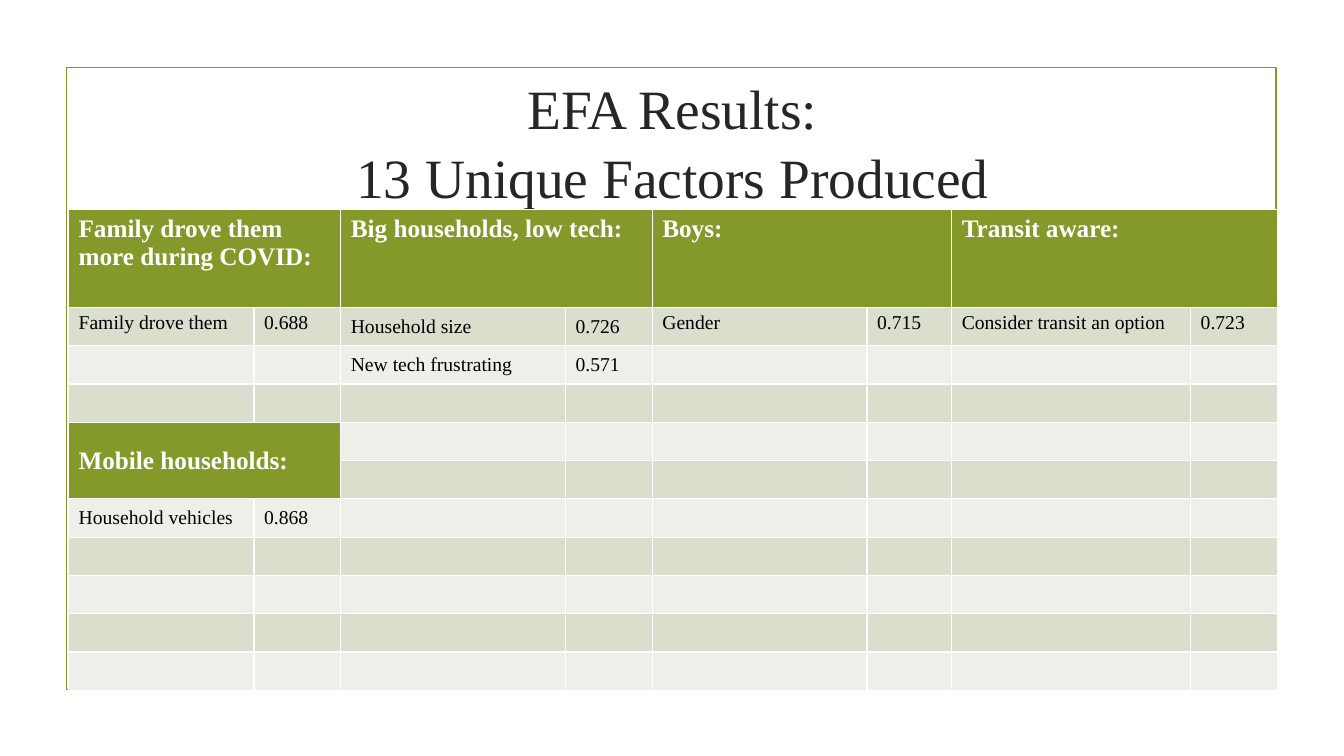
from pptx import Presentation
from pptx.dml.color import RGBColor
from pptx.enum.shapes import MSO_SHAPE as Shape
from pptx.enum.text import MSO_ANCHOR as Anchor, PP_ALIGN as Align
from pptx.util import Inches, Pt

GREEN = RGBColor(0x83, 0x99, 0x2A)
SAGE = RGBColor(0xD9, 0xDE, 0xCD)
PALE = RGBColor(0xED, 0xEF, 0xE8)
WHITE = RGBColor(0xFF, 0xFF, 0xFF)
BLACK = RGBColor(0, 0, 0)
DARK = RGBColor(0x26, 0x26, 0x26)
FONT = "Times New Roman"

COLS = [1.84, 0.86, 2.23, 0.86, 2.13, 0.84, 2.37, 0.86]
ROWS = [0.97] + [0.38] * 10
HEADS = [
    (0, 0, 1, "Family drove them more during COVID:", Anchor.TOP),
    (0, 2, 1, "Big households, low tech:", Anchor.TOP),
    (0, 4, 1, "Boys:", Anchor.TOP),
    (0, 6, 1, "Transit aware:", Anchor.TOP),
    (4, 0, 2, "Mobile households:", Anchor.MIDDLE),
]
LOADS = [
    (1, 0, "Family drove them", "0.688", Anchor.TOP),
    (1, 2, "Household size", "0.726", Anchor.MIDDLE),
    (1, 4, "Gender", "0.715", Anchor.TOP),
    (1, 6, "Consider transit an option", "0.723", Anchor.TOP),
    (2, 2, "New tech frustrating", "0.571", Anchor.MIDDLE),
    (6, 0, "Household vehicles", "0.868", Anchor.MIDDLE),
]


def style(frame, size, color, bold=False):
    """Format every run in a text frame."""
    for para in frame.paragraphs:
        for run in para.runs:
            font = run.font
            font.name, font.size, font.bold = FONT, Pt(size), bold
            font.color.rgb = color


def fill(cell, color):
    """Give a cell a solid colour."""
    cell.fill.solid()
    cell.fill.fore_color.rgb = color


def write(cell, text, anchor, size, color, bold=False):
    """Put formatted text in a cell."""
    cell.text_frame.text = text
    cell.vertical_anchor = anchor
    cell.margin_top = cell.margin_bottom = Inches(0.05)
    style(cell.text_frame, size, color, bold)


def add_frame(slide, x, y, w, h):
    """Draw the green outline around the content."""
    box = slide.shapes.add_shape(
        Shape.RECTANGLE, Inches(x), Inches(y), Inches(w), Inches(h))
    box.shadow.inherit = False
    box.fill.background()
    box.line.color.rgb = GREEN
    box.line.width = Pt(1.25)


def add_title(slide, x, y, w, h):
    """Place the two-line title."""
    title = slide.shapes.title
    title.left, title.top = Inches(x), Inches(y)
    title.width, title.height = Inches(w), Inches(h)
    frame = title.text_frame
    frame.text = "EFA Results:\v13 Unique Factors Produced"
    frame.word_wrap = True
    frame.vertical_anchor = Anchor.MIDDLE
    frame.margin_bottom = 0
    para = frame.paragraphs[0]
    para.alignment = Align.CENTER
    para.line_spacing = 1.05
    style(frame, 39.6, DARK)


def add_grid(slide, x, y, w, h):
    """Build the table of factors and their loadings."""
    grid = slide.shapes.add_table(
        len(ROWS), len(COLS), Inches(x), Inches(y), Inches(w), Inches(h)).table
    for col, width in zip(grid.columns, COLS):
        col.width = Inches(width)
    for row, height in zip(grid.rows, ROWS):
        row.height = Inches(height)
    for num, row in enumerate(grid.rows):
        for cell in row.cells:
            fill(cell, SAGE if num % 2 else PALE)
            cell.margin_top = cell.margin_bottom = Inches(0.02)
    for row, col, span, text, anchor in HEADS:
        cell = grid.cell(row, col)
        cell.merge(grid.cell(row + span - 1, col + 1))
        fill(cell, GREEN)
        write(cell, text, anchor, 18, WHITE, True)
    for row, col, name, load, anchor in LOADS:
        for step, text in enumerate((name, load)):
            write(grid.cell(row, col + step), text, anchor, 14, BLACK)


def main():
    """Build and save the slide."""
    deck = Presentation()
    deck.slide_width, deck.slide_height = Inches(13.33), Inches(7.5)
    slide = deck.slides.add_slide(deck.slide_layouts[5])
    add_frame(slide, 0.66, 0.67, 12, 6.17)
    add_title(slide, 1.42, 0.65, 10.5, 1.43)
    add_grid(slide, 0.68, 2.08, sum(COLS), sum(ROWS))
    deck.save("out.pptx")


if __name__ == "__main__":
    main()
